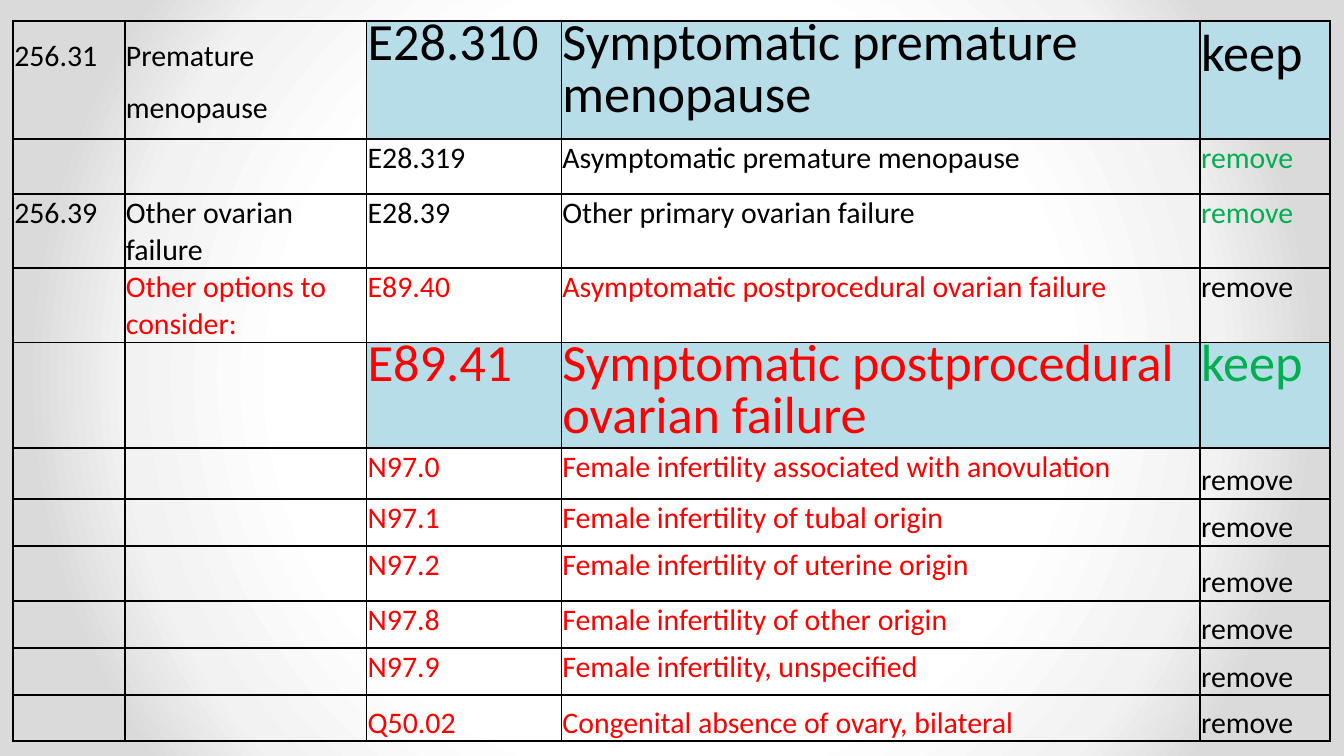
"""Build a slide with a table that maps diagnosis codes to keep or remove decisions."""
from lxml.etree import SubElement
from pptx import Presentation
from pptx.dml.color import RGBColor
from pptx.enum.text import MSO_ANCHOR as Anchor
from pptx.oxml import parse_xml
from pptx.oxml.ns import nsdecls, qn
from pptx.util import Cm, Pt

COLORS = {"black": "000000", "red": "FF0000", "green": "00B050", "highlight": "B7DEE8"}
BACKGROUND_STOPS = [(50, "FFFFFF"), (71, "F2F2F2"), (84, "DADADA")]
COLUMN_WIDTHS = [2.11, 4.57, 3.68, 12.07, 2.46]
ROWS = [
    (2.23, ["256.31", "Premature menopause", "E28.310", "Symptomatic premature menopause", "keep"]),
    (1.04, ["", "", "E28.319", "Asymptomatic premature menopause", "remove"]),
    (1.4, ["256.39", "Other ovarian failure", "E28.39", "Other primary ovarian failure", "remove"]),
    (1.4, ["", "Other options to consider:", "E89.40",
           "Asymptomatic postprocedural ovarian failure", "remove"]),
    (1.98, ["", "", "E89.41", "Symptomatic postprocedural ovarian failure", "keep"]),
    (0.96, ["", "", "N97.0", "Female infertility associated with anovulation", "remove"]),
    (0.89, ["", "", "N97.1", "Female infertility of tubal origin", "remove"]),
    (1.04, ["", "", "N97.2", "Female infertility of uterine origin", "remove"]),
    (0.89, ["", "", "N97.8", "Female infertility of other origin", "remove"]),
    (0.89, ["", "", "N97.9", "Female infertility, unspecified", "remove"]),
    (0.87, ["", "", "Q50.02", "Congenital absence of ovary, bilateral", "remove"]),
]
CODE_COLUMN, ACTION_COLUMN = 2, 4
FIRST_OPTION_ROW, FIRST_BOTTOM_ROW, LAST_ROW = 3, 5, len(ROWS) - 1
GREEN_ACTION_ROWS = {1, 2, 4}
CELL_FORMAT = {"margin_left": Cm(0.02), "margin_right": Cm(0.02),
               "margin_top": Cm(0.02), "margin_bottom": 0}


def set_background(slide):
    stops = "".join(f'<a:gs pos="{position * 1000}"><a:srgbClr val="{color}"/></a:gs>'
                    for position, color in BACKGROUND_STOPS)
    slide.element.cSld.insert(0, parse_xml(
        f'<p:bg {nsdecls("p", "a")}><p:bgPr><a:gradFill><a:gsLst>{stops}</a:gsLst>'
        '<a:path path="circle"><a:fillToRect l="50000" t="50000" r="50000" b="50000"/></a:path>'
        '</a:gradFill><a:effectLst/></p:bgPr></p:bg>'))


def set_borders(cell):
    properties = cell._tc.get_or_add_tcPr()
    for side in ("lnL", "lnR", "lnT", "lnB"):
        line = SubElement(properties, qn(f"a:{side}"), w=str(Pt(1)))
        fill = SubElement(line, qn("a:solidFill"))
        SubElement(fill, qn("a:srgbClr"), val=COLORS["black"])


def text_color(row, column):
    if column == ACTION_COLUMN:
        return "green" if row in GREEN_ACTION_ROWS else "black"
    return "red" if row >= FIRST_OPTION_ROW else "black"


def fill_cell(cell, text, row, column, kept):
    for name, value in CELL_FORMAT.items():
        setattr(cell, name, value)
    set_borders(cell)
    highlighted = kept and column >= CODE_COLUMN
    if highlighted:
        cell.fill.solid()
        cell.fill.fore_color.rgb = RGBColor.from_string(COLORS["highlight"])
    else:
        cell.fill.background()
    if not text:
        return
    at_bottom = row == LAST_ROW or (row >= FIRST_BOTTOM_ROW and column == ACTION_COLUMN)
    cell.vertical_anchor = Anchor.BOTTOM if at_bottom else Anchor.TOP
    paragraph = cell.text_frame.paragraphs[0]
    if kept and (row, column) != (0, ACTION_COLUMN):
        paragraph.line_spacing = Pt(28)
    run = paragraph.add_run()
    run.text = text
    font_format = {"name": "Calibri", "size": Pt(28 if highlighted else 16), "bold": False}
    for name, value in font_format.items():
        setattr(run.font, name, value)
    run.font.color.rgb = RGBColor.from_string(COLORS[text_color(row, column)])


def main():
    presentation = Presentation()
    presentation.slide_width, presentation.slide_height = Cm(25.4), Cm(14.29)
    slide = presentation.slides.add_slide(presentation.slide_layouts[6])
    set_background(slide)
    heights = [height for height, _ in ROWS]
    table = slide.shapes.add_table(len(ROWS), len(COLUMN_WIDTHS), Cm(0.25), Cm(0.4),
                                   Cm(sum(COLUMN_WIDTHS)), Cm(sum(heights))).table
    table.first_row = table.horz_banding = False
    for column, width in zip(table.columns, COLUMN_WIDTHS):
        column.width = Cm(width)
    for row, (height, texts) in enumerate(ROWS):
        table.rows[row].height = Cm(height)
        for column, text in enumerate(texts):
            fill_cell(table.cell(row, column), text, row, column, texts[-1] == "keep")
    presentation.save("out.pptx")


if __name__ == "__main__":
    main()
